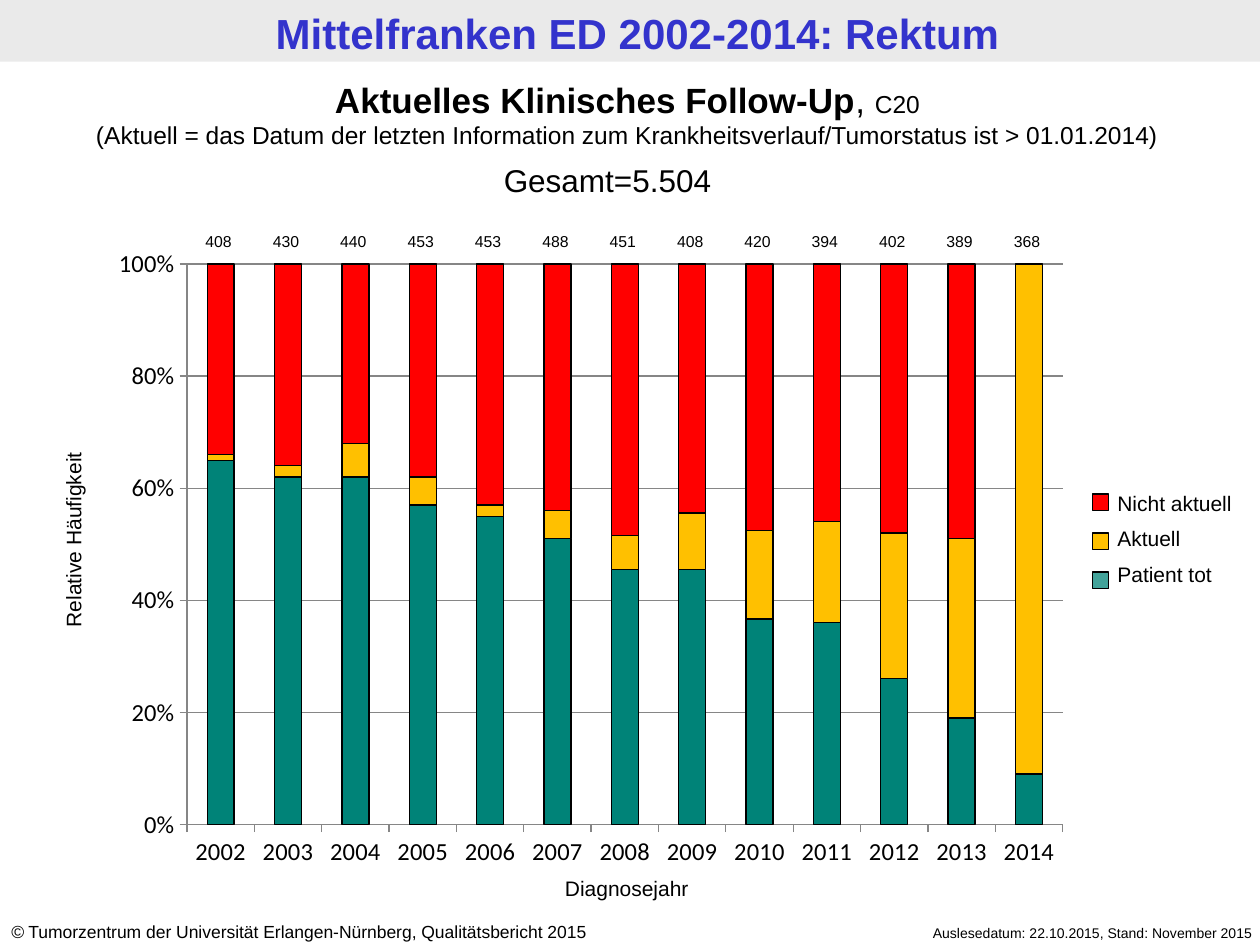
import pptx
import pptx.chart.data
import pptx.dml.color
import pptx.enum.chart
import pptx.enum.shapes
import pptx.enum.text
import pptx.oxml
import pptx.oxml.ns
import pptx.util
from pptx.util import Inches

ALIGN = pptx.enum.text.PP_ALIGN
TEAL, AMBER, RED = "008378", "FFC000", "FF0000"
YEARS = [str(year) for year in range(2002, 2015)]
CASES = [408, 430, 440, 453, 453, 488, 451, 408, 420, 394, 402, 389, 368]
SERIES = [
    ("Patient tot", TEAL, [65, 62, 62, 57, 55, 51, 45, 45, 37, 36, 26, 19, 9]),
    ("Aktuell", AMBER, [1, 2, 6, 5, 2, 5, 6, 10, 16, 18, 26, 32, 91]),
    ("Nicht aktuell", RED, [34, 36, 32, 38, 43, 44, 48, 44, 48, 46, 48, 49, 0]),
]


def rgb(value):
    return pptx.dml.color.RGBColor.from_string(value)


class SlideBuilder:
    """Holds the text style and the current slide and adds elements to it."""

    def __init__(self, slide, font="Arial", ink="000000", grid="868686"):
        self.slide, self.font, self.ink, self.grid = slide, font, ink, grid

    def style(self, font, size, color=None, bold=False, italic=False, name=None):
        font.name = name or self.font
        font.size = pptx.util.Pt(size)
        font.bold, font.italic = bold, italic
        font.color.rgb = rgb(color or self.ink)

    def line(self, fmt, color, width=0.75):
        fmt.color.rgb = rgb(color)
        fmt.width = pptx.util.Pt(width)

    def box(self, x, y, w, h, fill, outlined=True, alpha=None):
        sp = self.slide.shapes.add_shape(
            pptx.enum.shapes.MSO_SHAPE.RECTANGLE, Inches(x), Inches(y), Inches(w), Inches(h))
        sp.shadow.inherit = False
        sp.fill.solid()
        sp.fill.fore_color.rgb = rgb(fill)
        if outlined:
            self.line(sp.line, self.ink)
        else:
            sp.line.fill.background()
        if alpha:
            clr = sp._element.spPr.find(".//" + pptx.oxml.ns.qn("a:srgbClr"))
            node = pptx.oxml.parse_xml(
                f'<a:alpha {pptx.oxml.ns.nsdecls("a")} val="{alpha * 1000}"/>')
            clr.append(node)

    def text(self, x, y, w, h, paragraphs, size, align=ALIGN.CENTER, gap=0, rotation=0):
        """Adds paragraphs given as lists of (text, font options) runs."""
        sp = self.slide.shapes.add_textbox(Inches(x), Inches(y), Inches(w), Inches(h))
        sp.rotation = rotation
        tf = sp.text_frame
        tf.word_wrap = True
        for i, runs in enumerate(paragraphs):
            p = tf.add_paragraph() if i else tf.paragraphs[0]
            p.alignment = align
            if i and gap:
                p.space_before = pptx.util.Pt(gap)
            for words, options in runs:
                r = p.add_run()
                r.text = words
                self.style(r.font, **{"size": size, **options})

    def label(self, x, y, w, h, words, size, align=ALIGN.CENTER, rotation=0, **options):
        self.text(x, y, w, h, [[(words, options)]], size, align, rotation=rotation)

    def chart(self, x, y, w, h, categories, series, layout):
        data = pptx.chart.data.CategoryChartData()
        data.categories = categories
        for name, _, values in series:
            data.add_series(name, values)
        chart = self.slide.shapes.add_chart(
            pptx.enum.chart.XL_CHART_TYPE.COLUMN_STACKED_100,
            Inches(x), Inches(y), Inches(w), Inches(h), data).chart
        chart.has_legend = chart.has_title = False
        self.style(chart.font, 14, name="Calibri")
        plot = chart.plots[0]
        plot.gap_width, plot.overlap, plot.vary_by_categories = 150, 100, False
        for item, (_, color, _) in zip(plot.series, series):
            item.format.fill.solid()
            item.format.fill.fore_color.rgb = rgb(color)
            self.line(item.format.line, self.ink)
        for axis in (chart.category_axis, chart.value_axis):
            axis.major_tick_mark = pptx.enum.chart.XL_TICK_MARK.OUTSIDE
            self.style(axis.tick_labels.font, 14, name="Calibri")
            self.line(axis.format.line, self.grid)
        axis = chart.value_axis
        axis.minimum_scale, axis.maximum_scale, axis.major_unit = 0, 1, 0.2
        axis.tick_labels.number_format = "0%"
        axis.tick_labels.number_format_is_linked = False
        self.line(axis.major_gridlines.format.line, self.grid)
        area = chart._chartSpace.chart.plotArea
        for old in area.findall(pptx.oxml.ns.qn("c:layout")):
            area.remove(old)
        parts = "".join(f'<c:{tag} val="{val}"/>' for tag, val in layout)
        area.insert(0, pptx.oxml.parse_xml(
            f'<c:layout {pptx.oxml.ns.nsdecls("c")}><c:manualLayout>'
            f'{parts}</c:manualLayout></c:layout>'))


def main():
    prs = pptx.Presentation()
    prs.slide_width, prs.slide_height = Inches(10), Inches(7.5)
    s = SlideBuilder(prs.slides.add_slide(prs.slide_layouts[6]))

    s.box(0, 0, 10, 0.49, "EAEAEA", outlined=False)
    s.label(0.06, 0.01, 10, 0.49, "Mittelfranken ED 2002-2014: Rektum", 24,
            color="3333CC", bold=True)
    s.label(6.65, 7.29, 3.39, 0.24, "Auslesedatum: 22.10.2015, Stand: November 2015", 8,
            ALIGN.RIGHT)
    s.text(-0.01, 7.26, 5.24, 0.27, [[
        ("©", {"italic": True}),
        (" Tumorzentrum der Universität Erlangen-Nürnberg, Qualitätsbericht 2015", {}),
    ]], 10, ALIGN.LEFT)

    s.chart(0.79, 1.87, 7.8, 5.11, YEARS, SERIES, [
        ("layoutTarget", "inner"), ("xMode", "edge"), ("yMode", "edge"),
        ("x", 0.089), ("y", 0.044), ("w", 0.891), ("h", 0.871)])
    s.label(-0.62, 4.13, 2.41, 0.31, "Relative Häufigkeit", 12, rotation=270)
    s.label(3.85, 6.9, 2.25, 0.31, "Diagnosejahr", 12)
    pitch = 7.8 * 0.891 / len(YEARS)
    for i, count in enumerate(CASES):
        s.label(1.46 + i * pitch, 1.79, 0.55, 0.25, str(count), 9)

    s.text(-0.04, 0.57, 10.04, 0.67, [
        [("Aktuelles Klinisches Follow-Up", {"bold": True}), (", ", {}), ("C20", {"size": 14})],
        [("(Aktuell = das Datum der letzten Information zum Krankheitsverlauf/Tumorstatus"
          " ist > 01.01.2014)", {"size": 14})],
    ], 20)
    s.label(3.9, 1.23, 2.2, 0.4, "Gesamt=5.504", 18, ALIGN.LEFT)

    legend = SERIES[::-1]
    s.text(8.77, 3.84, 1.23, 0.91, [[(name, {})] for name, _, _ in legend], 12,
           ALIGN.LEFT, gap=6)
    for i, (_, color, _) in enumerate(legend):
        s.box(8.67, 3.92 + i * 0.31, 0.13, 0.13, color, alpha=74 if color == TEAL else None)

    prs.save("out.pptx")


if __name__ == "__main__":
    main()
